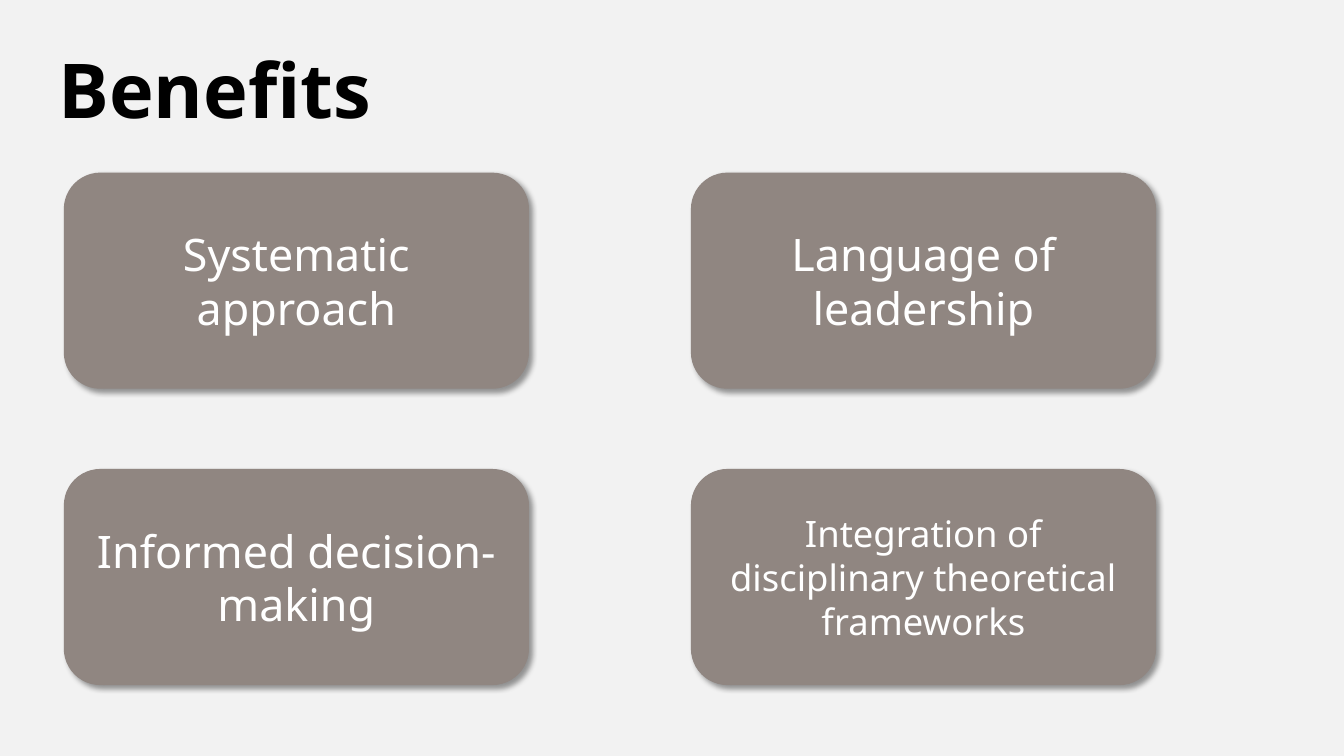
"""Build the Benefits slide: a title above a two-by-two grid of cards."""
from dataclasses import dataclass

from lxml.etree import SubElement
from pptx import Presentation
from pptx.dml.color import RGBColor
from pptx.enum.shapes import MSO_SHAPE
from pptx.enum.text import MSO_ANCHOR, PP_ALIGN
from pptx.oxml.ns import qn
from pptx.util import Inches, Pt


@dataclass(frozen=True)
class Theme:
    font: str = "Noto Sans"
    background: str = "F2F2F2"
    card: str = "908681"
    title_text: str = "000000"
    card_text: str = "FFFFFF"
    shadow: str = "000000"
    title_size: int = 54
    large_size: int = 32
    small_size: int = 26


THEME = Theme()
BENEFITS = [
    ("Systematic approach", THEME.large_size),
    ("Language of leadership", THEME.large_size),
    ("Informed decision-making", THEME.large_size),
    ("Integration of disciplinary theoretical frameworks", THEME.small_size),
]
COLUMNS = 2
GRID_LEFT, GRID_TOP = 0.64, 1.72
COLUMN_STEP, ROW_STEP = 6.22, 2.94
CARD_WIDTH, CARD_HEIGHT = 4.6, 2.13


def add_span(para, text, size, color, bold=False):
    span = para.add_run()
    span.text = text
    span.font.name = THEME.font
    span.font.size = Pt(size)
    span.font.bold = bold
    span.font.color.rgb = RGBColor.from_string(color)


def add_shadow(box):
    box.shadow.inherit = False
    effects = box._element.spPr.find(qn("a:effectLst"))
    shadow = SubElement(effects, qn("a:outerShdw"), blurRad=str(Pt(4)),
                        dist=str(Pt(3)), dir=str(45 * 60000),
                        algn="tl", rotWithShape="0")
    color = SubElement(shadow, qn("a:srgbClr"), val=THEME.shadow)
    SubElement(color, qn("a:alpha"), val="40000")


def add_title(page, text):
    title = page.shapes.title
    title.left, title.top = Inches(0.53), Inches(0.5)
    title.width, title.height = Inches(12.15), Inches(0.87)
    frame = title.text_frame
    frame.word_wrap = True
    frame.vertical_anchor = MSO_ANCHOR.MIDDLE
    frame.margin_left = Inches(0.05)
    para = frame.paragraphs[0]
    para.alignment = PP_ALIGN.LEFT
    para.line_spacing = 0.9
    add_span(para, text, THEME.title_size, THEME.title_text, bold=True)


def add_card(page, left, top, text, size):
    box = page.shapes.add_shape(MSO_SHAPE.ROUNDED_RECTANGLE, Inches(left),
                                Inches(top), Inches(CARD_WIDTH),
                                Inches(CARD_HEIGHT))
    color = RGBColor.from_string(THEME.card)
    box.fill.solid()
    box.fill.fore_color.rgb = color
    box.line.color.rgb = color
    box.line.width = Pt(1)
    add_shadow(box)
    frame = box.text_frame
    frame.word_wrap = True
    frame.vertical_anchor = MSO_ANCHOR.MIDDLE
    para = frame.paragraphs[0]
    para.alignment = PP_ALIGN.CENTER
    add_span(para, text, size, THEME.card_text)


def main():
    deck = Presentation()
    deck.slide_width, deck.slide_height = Inches(13.33), Inches(7.5)
    page = deck.slides.add_slide(deck.slide_layouts.get_by_name("Title Only"))
    page.background.fill.solid()
    page.background.fill.fore_color.rgb = RGBColor.from_string(THEME.background)
    add_title(page, "Benefits")
    for index, (text, size) in enumerate(BENEFITS):
        row, column = divmod(index, COLUMNS)
        add_card(page, GRID_LEFT + column * COLUMN_STEP,
                 GRID_TOP + row * ROW_STEP, text, size)
    deck.save("out.pptx")


if __name__ == "__main__":
    main()
